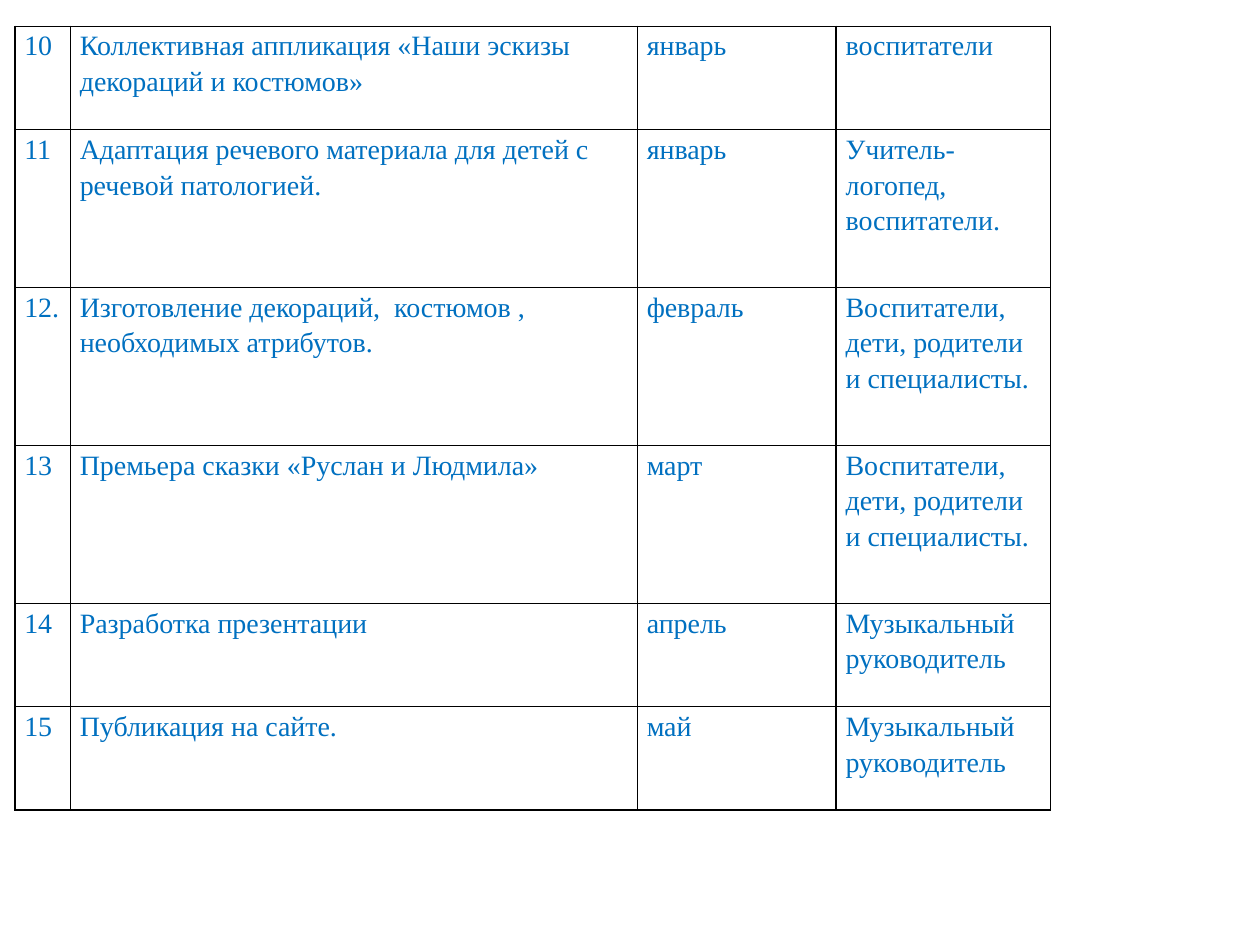
from dataclasses import dataclass

from lxml import etree
from pptx import Presentation, util as u
from pptx.dml.color import RGBColor
from pptx.oxml import ns


@dataclass(frozen=True)
class Theme:
    """Colours, font and sizes of the slide."""
    ink: RGBColor = RGBColor(0x00, 0x70, 0xC0)
    border: str = "000000"
    border_width: int = u.Pt(1)
    font: str = "Times New Roman"
    size: int = u.Pt(16)
    line_spacing: float = 1.15
    inset: int = u.Cm(0.19)


THEME = Theme()
COLS = [1.12, 11.43, 4.01, 4.32]
SHORT, TALL = 2.08, 3.18
PLAN = [
    (SHORT, "10", "Коллективная аппликация «Наши эскизы декораций и костюмов»",
     "январь", "воспитатели"),
    (TALL, "11", "Адаптация речевого материала для детей с речевой патологией.",
     "январь", "Учитель-логопед, воспитатели."),
    (TALL, "12.", "Изготовление декораций,  костюмов , необходимых атрибутов.",
     "февраль", "Воспитатели, дети, родители и специалисты."),
    (TALL, "13", "Премьера сказки «Руслан и Людмила»",
     "март", "Воспитатели, дети, родители и специалисты."),
    (SHORT, "14", "Разработка презентации", "апрель", "Музыкальный руководитель"),
    (SHORT, "15", "Публикация на сайте.", "май", "Музыкальный руководитель"),
]


def set_borders(cell):
    """Draw a solid line on all four sides of a cell."""
    pr = cell._tc.get_or_add_tcPr()
    for i, side in enumerate(("lnL", "lnR", "lnT", "lnB")):
        ln = etree.Element(ns.qn(f"a:{side}"), w=str(THEME.border_width))
        fill = etree.SubElement(ln, ns.qn("a:solidFill"))
        etree.SubElement(fill, ns.qn("a:srgbClr"), val=THEME.border)
        pr.insert(i, ln)


def fill_cell(cell, words):
    """Write and format one cell."""
    cell.margin_left = cell.margin_right = THEME.inset
    cell.margin_top = cell.margin_bottom = 0
    cell.fill.background()
    set_borders(cell)
    p = cell.text_frame.paragraphs[0]
    p.text = words
    p.line_spacing = THEME.line_spacing
    p.font.name = THEME.font
    p.font.size = THEME.size
    p.font.color.rgb = THEME.ink


def add_plan(s, left, top, width, height):
    """Place the work plan table in the given box."""
    table = s.shapes.add_table(len(PLAN), len(COLS), left, top, width, height).table
    table.first_row = table.horz_banding = False
    for col, share in zip(table.columns, COLS):
        col.width = int(width * share / sum(COLS))
    total = sum(row[0] for row in PLAN)
    for row, (share, *texts) in zip(table.rows, PLAN):
        row.height = int(height * share / total)
        for cell, words in zip(row.cells, texts):
            fill_cell(cell, words)


def main():
    """Build the slide and save it."""
    prs = Presentation()
    prs.slide_width, prs.slide_height = u.Cm(25.4), u.Cm(19.05)
    s = prs.slides.add_slide(prs.slide_layouts[6])
    add_plan(s, u.Cm(0.3), u.Cm(0.53), u.Cm(20.88), u.Cm(15.8))
    prs.save("out.pptx")


if __name__ == "__main__":
    main()
